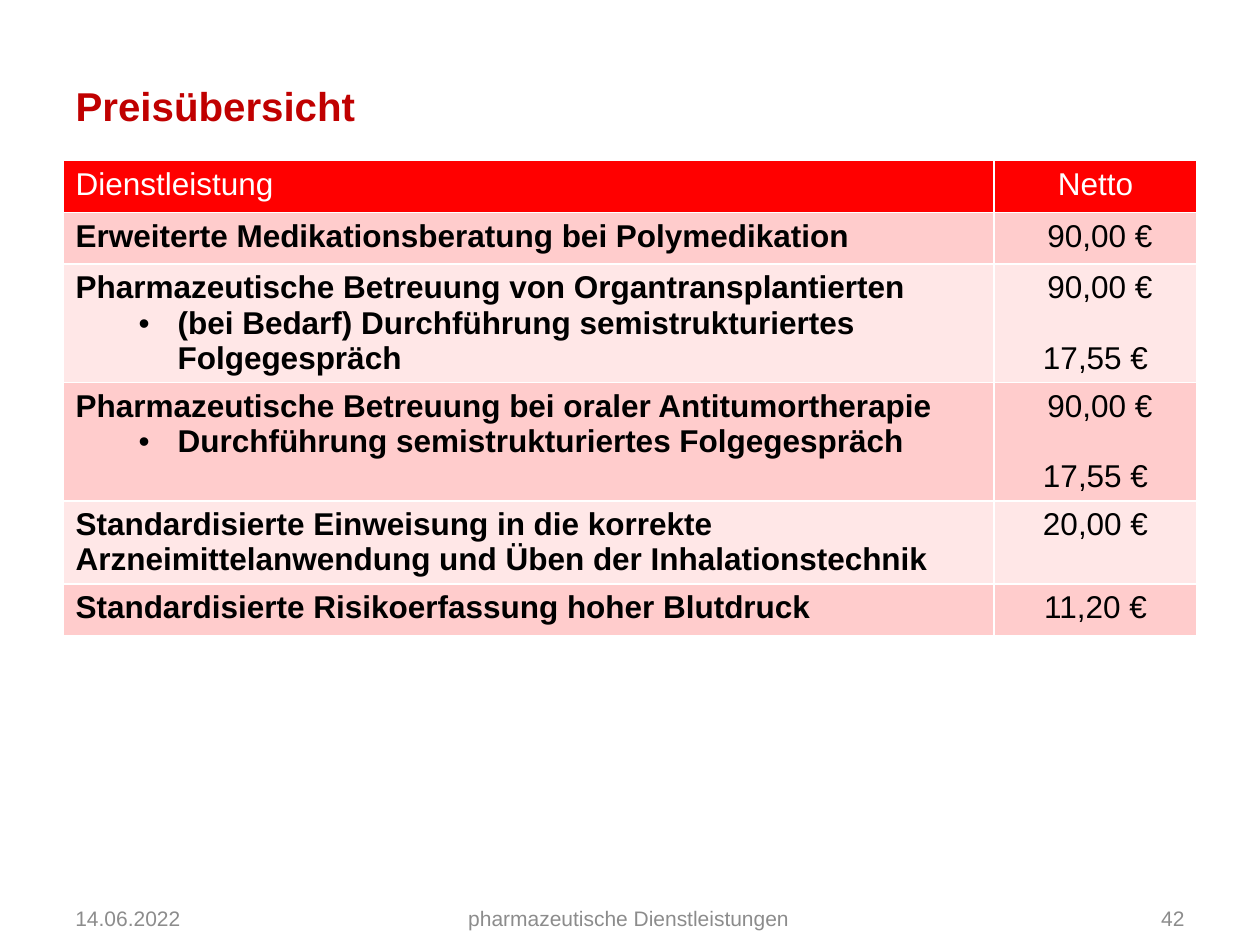
from lxml import etree
from pptx import Presentation
from pptx.dml.color import RGBColor
from pptx.enum.text import MSO_ANCHOR, MSO_AUTO_SIZE, PP_ALIGN
from pptx.oxml.ns import qn
from pptx.util import Inches, Pt

LEFT, CENTER, RIGHT = PP_ALIGN.LEFT, PP_ALIGN.CENTER, PP_ALIGN.RIGHT
MIDDLE, BOTTOM = MSO_ANCHOR.MIDDLE, MSO_ANCHOR.BOTTOM
NO_FIT = MSO_AUTO_SIZE.NONE

WIDTH, HEIGHT = Inches(10), Inches(7.5)
LINE_PITCH = 0.28    # inches per line of table text
CELL_PADDING = 0.1   # inches above and below together
MIN_ROW = 0.41

# Each row: service, optional follow-up, prices, shift of first price, lines
SERVICES = [
    ("Erweiterte Medikationsberatung bei Polymedikation", None,
     ["90,00 €"], 0.07, 1),
    ("Pharmazeutische Betreuung von Organtransplantierten",
     "(bei Bedarf) Durchführung semistrukturiertes Folgegespräch",
     ["90,00 €", "17,55 €"], 0.07, 3),
    ("Pharmazeutische Betreuung bei oraler Antitumortherapie",
     "Durchführung semistrukturiertes Folgegespräch",
     ["90,00 €", "17,55 €"], 0.07, 3),
    ("Standardisierte Einweisung in die korrekte "
     "Arzneimittelanwendung und Üben der Inhalationstechnik", None,
     ["20,00 €"], 0, 2),
    ("Standardisierte Risikoerfassung hoher Blutdruck", None,
     ["11,20 €"], 0, 1),
]


def rgb(value):
    return RGBColor.from_string(value)


class Deck:
    font = "Arial"
    title_color, header_fill, footer_color = "C00000", "FF0000", "8C8C8C"
    bands = ("FFCCCC", "FFE7E7")
    white, black = "FFFFFF", "000000"

    def __init__(self):
        self.prs = Presentation()
        self.prs.slide_width, self.prs.slide_height = WIDTH, HEIGHT
        self.slide = self.prs.slides.add_slide(self.prs.slide_layouts[5])

    def box(self, x, y, w, h):
        """Turn shares of the slide into lengths."""
        return int(x * WIDTH), int(y * HEIGHT), int(w * WIDTH), int(h * HEIGHT)

    def format(self, p, size, color, bold=False, align=LEFT):
        p.alignment = align
        for r in p.runs:
            r.font.name, r.font.size, r.font.bold = self.font, Pt(size), bold
            r.font.color.rgb = rgb(color)

    def title(self, text, *place):
        s = self.slide.shapes.title
        s.left, s.top, s.width, s.height = self.box(*place)
        tf = s.text_frame
        tf.text = text
        tf.auto_size, tf.vertical_anchor = NO_FIT, BOTTOM
        self.format(tf.paragraphs[0], 23, self.title_color, True)

    def footer(self, text, align, *place):
        tf = self.slide.shapes.add_textbox(*self.box(*place)).text_frame
        tf.text = text
        tf.word_wrap, tf.vertical_anchor = True, MIDDLE
        self.format(tf.paragraphs[0], 12, self.footer_color, align=align)

    def indent(self, p, left, first=0, bullet=None):
        pPr = p._p.get_or_add_pPr()
        pPr.set("marL", str(Inches(left)))
        pPr.set("indent", str(Inches(first)))
        if bullet:
            etree.SubElement(pPr, qn("a:buFont")).set("typeface", self.font)
            etree.SubElement(pPr, qn("a:buChar")).set("char", bullet)

    def cell(self, cell, lines, fill, color, bold=False, align=LEFT):
        tcPr = cell._tc.get_or_add_tcPr()
        for side in ("lnL", "lnR", "lnT", "lnB"):
            ln = etree.SubElement(tcPr, qn(f"a:{side}"), w=str(Pt(1)))
            solid = etree.SubElement(ln, qn("a:solidFill"))
            etree.SubElement(solid, qn("a:srgbClr"), val=self.white)
        cell.fill.solid()
        cell.fill.fore_color.rgb = rgb(fill)
        cell.text_frame.text = "\n".join(lines)
        for p in cell.text_frame.paragraphs:
            self.format(p, 18, color, bold, align)
        return cell.text_frame.paragraphs

    def price_table(self, header, services, *place):
        table = self.slide.shapes.add_table(
            len(services) + 1, 2, *self.box(*place)).table
        for column, width in zip(table.columns, (7.39, 1.61)):
            column.width = Inches(width)

        # Header row
        table.rows[0].height = Inches(MIN_ROW)
        for i, (text, align) in enumerate(zip(header, (LEFT, CENTER))):
            self.cell(table.cell(0, i), [text], self.header_fill, self.white,
                      align=align)

        # Service rows in alternating bands
        for i, (name, follow_up, prices, shift, lines) in enumerate(services, 1):
            fill = self.bands[(i - 1) % 2]
            table.rows[i].height = Inches(
                max(MIN_ROW, lines * LINE_PITCH + CELL_PADDING))
            names = [name, follow_up] if follow_up else [name]
            left = self.cell(table.cell(i, 0), names, fill, self.black, True)
            right = self.cell(table.cell(i, 1), prices, fill, self.black,
                              align=CENTER)
            for p in left[1:]:
                p.level = 1
                self.indent(p, 0.81, -0.31, "•")
            if shift:
                self.indent(right[0], shift)
            for p in right[1:]:
                p.space_before = Pt(20)


def main():
    deck = Deck()
    deck.title("Preisübersicht", 0.05, 0, 0.9, 0.144)
    deck.price_table(("Dienstleistung", "Netto"), SERVICES,
                     0.05, 0.17, 0.9, 0.5)

    # Footer: date, topic, page number
    x = 0.05
    for text, align, width in (("14.06.2022", LEFT, 0.154),
                               ("pharmazeutische Dienstleistungen", CENTER, 0.59),
                               ("42", RIGHT, 0.156)):
        deck.footer(text, align, x, 0.943, width, 0.057)
        x += width
    deck.prs.save("out.pptx")


if __name__ == "__main__":
    main()
